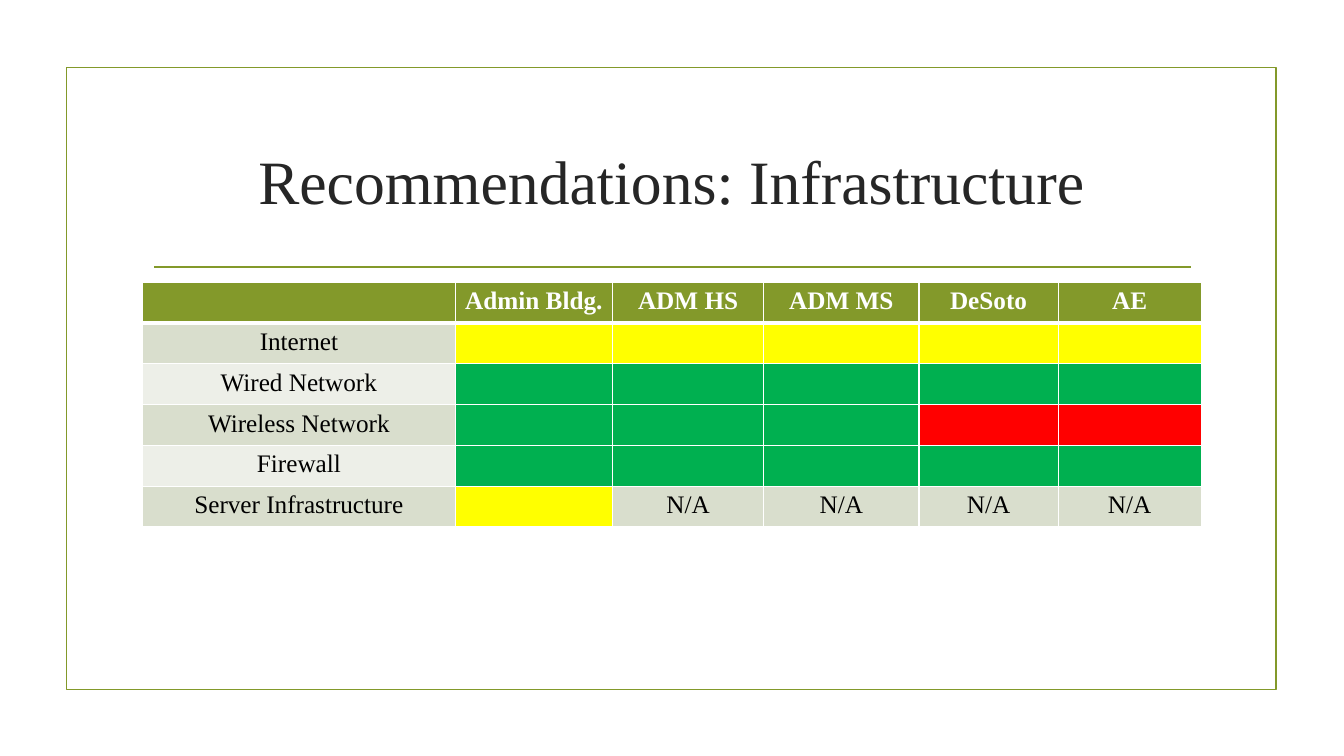
from pptx import Presentation, util as u
from pptx.dml.color import RGBColor
from pptx.enum import shapes, text
from lxml import etree

# Content: Y, G and R are status colours
TITLE = "Recommendations: Infrastructure"
SITES = ["", "Admin Bldg.", "ADM HS", "ADM MS", "DeSoto", "AE"]
ROWS = [
    ("Internet", "Y Y Y Y Y"),
    ("Wired Network", "G G G G G"),
    ("Wireless Network", "G G G R R"),
    ("Firewall", "G G G G G"),
    ("Server Infrastructure", "Y N/A N/A N/A N/A"),
]

# Style
OLIVE = RGBColor(0x83, 0x99, 0x2A)
WHITE = RGBColor(0xFF, 0xFF, 0xFF)
BLACK = RGBColor(0, 0, 0)
DARK = RGBColor(0x26, 0x26, 0x26)
BANDS = [RGBColor(0xD9, 0xDE, 0xCD), RGBColor(0xED, 0xEF, 0xE8)]
STATUS = {
    "Y": RGBColor(0xFF, 0xFF, 0),
    "G": RGBColor(0, 0xB0, 0x50),
    "R": RGBColor(0xFF, 0, 0),
}
FONT = "Times New Roman"
NS = "http://schemas.openxmlformats.org/drawingml/2006/main"

# Grid, in inches
WIDE, HIGH = 13.33, 7.5
COLS = [3.1, 1.56, 1.5, 1.54, 1.38, 1.42]
ROW = 0.405
BODY = sum(COLS)
LEFT = (WIDE - BODY) / 2
RULE = 10.28
EDGE = 1.53
PAD = 0.05


def box(*sizes):
    return [u.Inches(n) for n in sizes]


def write(frame, words, size=18, color=BLACK, bold=False):
    frame.word_wrap = True
    para = frame.paragraphs[0]
    para.alignment = text.PP_ALIGN.CENTER
    font = para.font
    if words:
        run = para.add_run()
        run.text = words
        font = run.font
    font.name, font.size, font.bold = FONT, u.Pt(size), bold
    font.color.rgb = color


def border(cell, **widths):
    props = cell._tc.get_or_add_tcPr()
    for side in "LRTB":
        line = etree.SubElement(props, f"{{{NS}}}ln{side}",
                                w=str(u.Pt(widths.get(side, 1))))
        fill = etree.SubElement(line, f"{{{NS}}}solidFill")
        etree.SubElement(fill, f"{{{NS}}}srgbClr", val=str(WHITE))


def paint(cell, words, fill, **form):
    cell.margin_left = cell.margin_right = u.Inches(PAD)
    write(cell.text_frame, words, **form)
    cell.fill.solid()
    cell.fill.fore_color.rgb = fill


deck = Presentation()
deck.slide_width, deck.slide_height = box(WIDE, HIGH)
slide = deck.slides.add_slide(deck.slide_layouts[6])

# Frame
frame = slide.shapes.add_shape(shapes.MSO_SHAPE.RECTANGLE,
                               *box(0.66, 0.67, 12, 6.17))
frame.shadow.inherit = False
frame.fill.background()

# Rule under the title
rule = slide.shapes.add_connector(shapes.MSO_CONNECTOR.STRAIGHT,
                                  *box(EDGE, 2.65, EDGE + RULE, 2.65))
etree.SubElement(rule._element.spPr, f"{{{NS}}}effectLst")
for part in (frame, rule):
    part.line.color.rgb = OLIVE
    part.line.width = u.Pt(1.25)

# Title
head = slide.shapes.add_textbox(*box(LEFT, 1.07, BODY, 1.43)).text_frame
head.vertical_anchor = text.MSO_ANCHOR.MIDDLE
write(head, TITLE, size=44, color=DARK)

# Status table
count = len(ROWS) + 1
table = slide.shapes.add_table(
    count, len(COLS), *box(LEFT, 2.8, BODY, ROW * count)).table
for col, width in zip(table.columns, COLS):
    col.width = u.Inches(width)
for row in table.rows:
    row.height = u.Inches(ROW)

for c, site in enumerate(SITES):
    cell = table.cell(0, c)
    border(cell, B=3)
    paint(cell, site, OLIVE, color=WHITE, bold=True)

for r, (name, marks) in enumerate(ROWS, 1):
    for c, mark in enumerate([name] + marks.split()):
        cell = table.cell(r, c)
        border(cell, T=3 if r == 1 else 1)
        words = "" if mark in STATUS else mark
        paint(cell, words, STATUS.get(mark, BANDS[(r - 1) % 2]))

deck.save("out.pptx")
